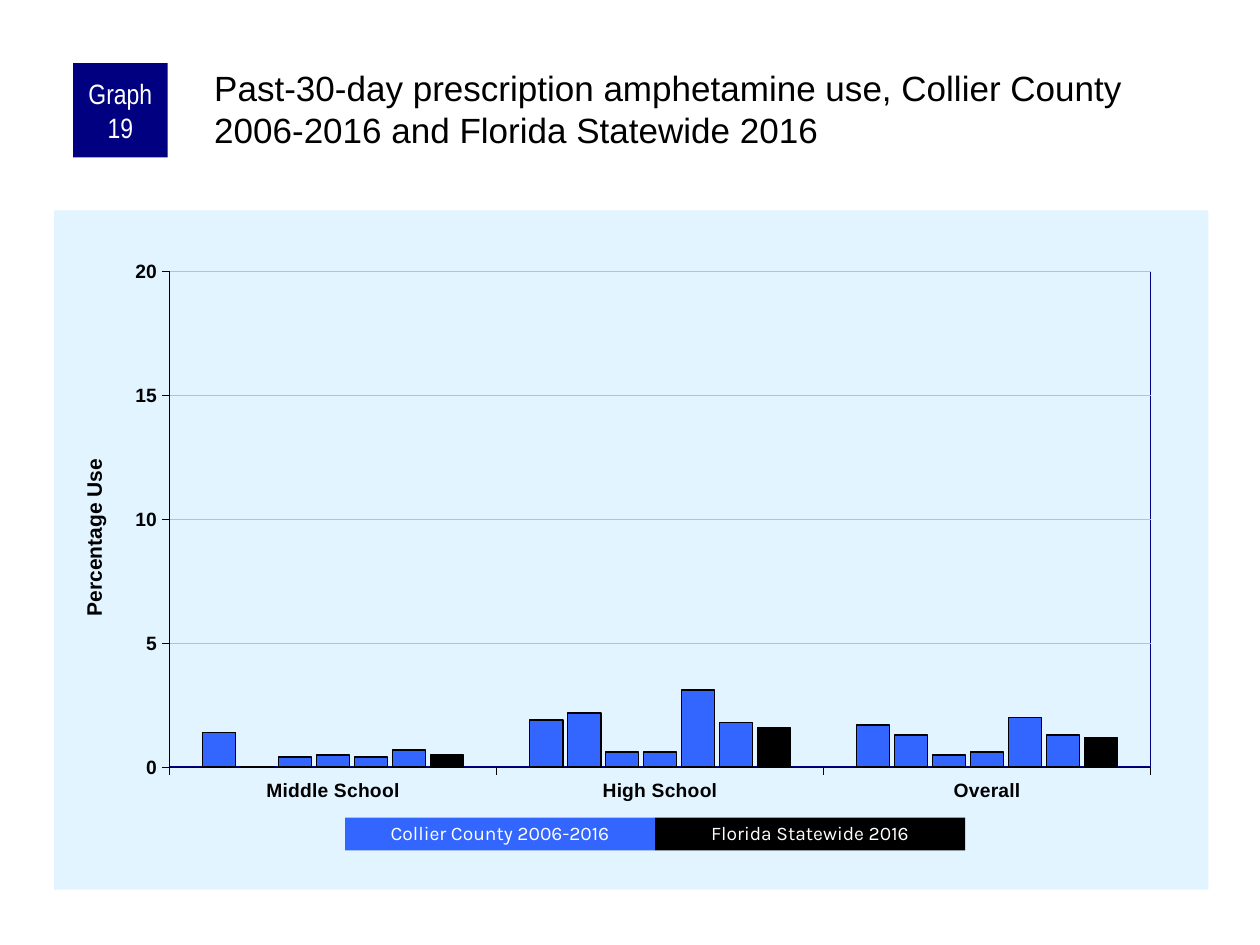
from lxml import etree
from pptx import Presentation
from pptx.chart.data import CategoryChartData
from pptx.dml.color import RGBColor
from pptx.enum.chart import XL_CHART_TYPE, XL_TICK_MARK
from pptx.enum.shapes import MSO_SHAPE
from pptx.enum.text import MSO_ANCHOR, PP_ALIGN
from pptx.oxml import parse_xml
from pptx.util import Inches, Pt

BARS = XL_CHART_TYPE.COLUMN_CLUSTERED
OUT, NONE = XL_TICK_MARK.OUTSIDE, XL_TICK_MARK.NONE
RECT = MSO_SHAPE.RECTANGLE
MIDDLE = MSO_ANCHOR.MIDDLE
CENTER = PP_ALIGN.CENTER
BLACK = RGBColor(0x00, 0x00, 0x00)
WHITE = RGBColor(0xFF, 0xFF, 0xFF)
NAVY = RGBColor(0x00, 0x00, 0x80)
BLUE = RGBColor(0x33, 0x66, 0xFF)
PALE = RGBColor(0xE1, 0xF4, 0xFF)
GREY = RGBColor(0xC0, 0xC0, 0xC0)
C = "http://schemas.openxmlformats.org/drawingml/2006/chart"
A = "http://schemas.openxmlformats.org/drawingml/2006/main"

GROUPS = ["Middle School", "High School", "Overall"]
USE = [
    (1.4, 1.9, 1.7),
    (0, 2.2, 1.3),
    (0.4, 0.6, 0.5),
    (0.5, 0.6, 0.6),
    (0.4, 3.1, 2),
    (0.7, 1.8, 1.3),
    (0.5, 1.6, 1.2),
]
KEYS = [("Collier County 2006-2016", BLUE), ("Florida Statewide 2016", BLACK)]


def layout(**parts):
    """Return a manual chart layout."""
    root = etree.Element(f"{{{C}}}layout", nsmap={"c": C})
    manual = etree.SubElement(root, f"{{{C}}}manualLayout")
    for name, value in parts.items():
        etree.SubElement(manual, f"{{{C}}}{name}").set("val", str(value))
    return parse_xml(etree.tostring(root))


def props(fill, line):
    """Return chart area properties."""
    return parse_xml(f'<c:spPr xmlns:c="{C}" xmlns:a="{A}">{fill}<a:ln w="12700">{line}</a:ln></c:spPr>')


def solid(color):
    """Return a solid fill as XML."""
    return f'<a:solidFill><a:srgbClr val="{color}"/></a:solidFill>'


class Page:
    """Hold the style and the current slide."""

    font = "Arial"

    def __init__(self, slide):
        self.slide = slide

    def style(self, font, size, color=BLACK, bold=False, name=None):
        font.name = name or self.font
        font.size = Pt(size)
        font.bold = bold
        font.color.rgb = color

    def stroke(self, line, color, width):
        line.color.rgb = color
        line.width = Pt(width)

    def label(self, frame, text, size, color, name=None):
        frame.word_wrap = True
        frame.text = text
        para = frame.paragraphs[0]
        self.style(para.runs[0].font, size, color, name=name)
        return para

    def box(self, spot, fill, text, size, name, space=1.0, inset=0.1):
        shape = self.slide.shapes.add_shape(RECT, *map(Inches, spot))
        shape.shadow.inherit = False
        shape.fill.solid()
        shape.fill.fore_color.rgb = fill
        shape.line.fill.background()
        frame = shape.text_frame
        frame.vertical_anchor = MIDDLE
        frame.margin_left = frame.margin_right = Inches(inset)
        frame.margin_top = frame.margin_bottom = 0
        para = self.label(frame, text, size, WHITE, name)
        para.alignment = CENTER
        para.line_spacing = space

    def title(self, spot, text):
        frame = self.slide.shapes.add_textbox(*map(Inches, spot)).text_frame
        frame.margin_left = frame.margin_top = Inches(0.03)
        frame.margin_right = frame.margin_bottom = 0
        self.label(frame, text, 20, BLACK)

    def axis(self, axis):
        axis.major_tick_mark = OUT
        axis.minor_tick_mark = NONE
        self.style(axis.tick_labels.font, 11, bold=True)
        self.stroke(axis.format.line, BLACK, 0.25)

    def chart(self, spot):
        data = CategoryChartData()
        data.categories = GROUPS
        for i, row in enumerate(USE, 1):
            data.add_series(f"Series {i}", row)
        chart = self.slide.shapes.add_chart(BARS, *map(Inches, spot), data).chart
        chart.has_legend = chart.has_title = False
        self.style(chart.font, 8)

        plot = chart.plots[0]
        plot.gap_width, plot.overlap = 200, -15
        plot.vary_by_categories = False
        for i, series in enumerate(plot.series, 1):
            series.format.fill.solid()
            series.format.fill.fore_color.rgb = BLACK if i == len(USE) else BLUE
            self.stroke(series.format.line, BLACK, 1)

        self.axis(chart.category_axis)
        scale = chart.value_axis
        self.axis(scale)
        scale.minimum_scale, scale.maximum_scale, scale.major_unit = 0, 20, 5
        scale.tick_labels.number_format = "0"
        scale.tick_labels.number_format_is_linked = False
        self.stroke(scale.major_gridlines.format.line, GREY, 0.25)
        frame = scale.axis_title.text_frame
        frame.text = "Percentage Use"
        self.style(frame.paragraphs[0].runs[0].font, 12, bold=True)
        root = chart.element
        head = root.find(f".//{{{C}}}valAx/{{{C}}}title")
        body = head.find(f".//{{{A}}}bodyPr")
        body.set("rot", "-5400000")
        body.set("vert", "horz")
        self.place(head, 1, xMode="edge", yMode="edge", x=0.02, y=0.36)

        area = root.find(f".//{{{C}}}plotArea")
        self.place(area, 0, layoutTarget="inner", xMode="edge", yMode="edge",
                   x=0.1, y=0.09, w=0.85, h=0.73)
        area.append(props("<a:noFill/>", solid(NAVY)))
        root.find(f"{{{C}}}chart").addnext(props(solid(PALE), "<a:noFill/>"))

    def place(self, node, index, **parts):
        for old in node.findall(f"{{{C}}}layout"):
            node.remove(old)
        node.insert(index, layout(**parts))


def main():
    deck = Presentation()
    deck.slide_width, deck.slide_height = Inches(10), Inches(7.5)
    page = Page(deck.slides.add_slide(deck.slide_layouts[6]))
    page.chart((0.43, 1.67, 9.16, 5.39))
    page.box((0.58, 0.5, 0.75, 0.75), NAVY, "Graph 19", 16, "Arial Narrow", inset=0.05)
    page.title((1.67, 0.5, 7.92, 0.83),
               "Past-30-day prescription amphetamine use, Collier County 2006-2016 and Florida Statewide 2016")
    for i, (text, fill) in enumerate(KEYS):
        page.box((2.74 + 2.46 * i, 6.49, 2.46, 0.26), fill, text, 11, "Karla", 0.9)
    deck.save("out.pptx")


if __name__ == "__main__":
    main()
